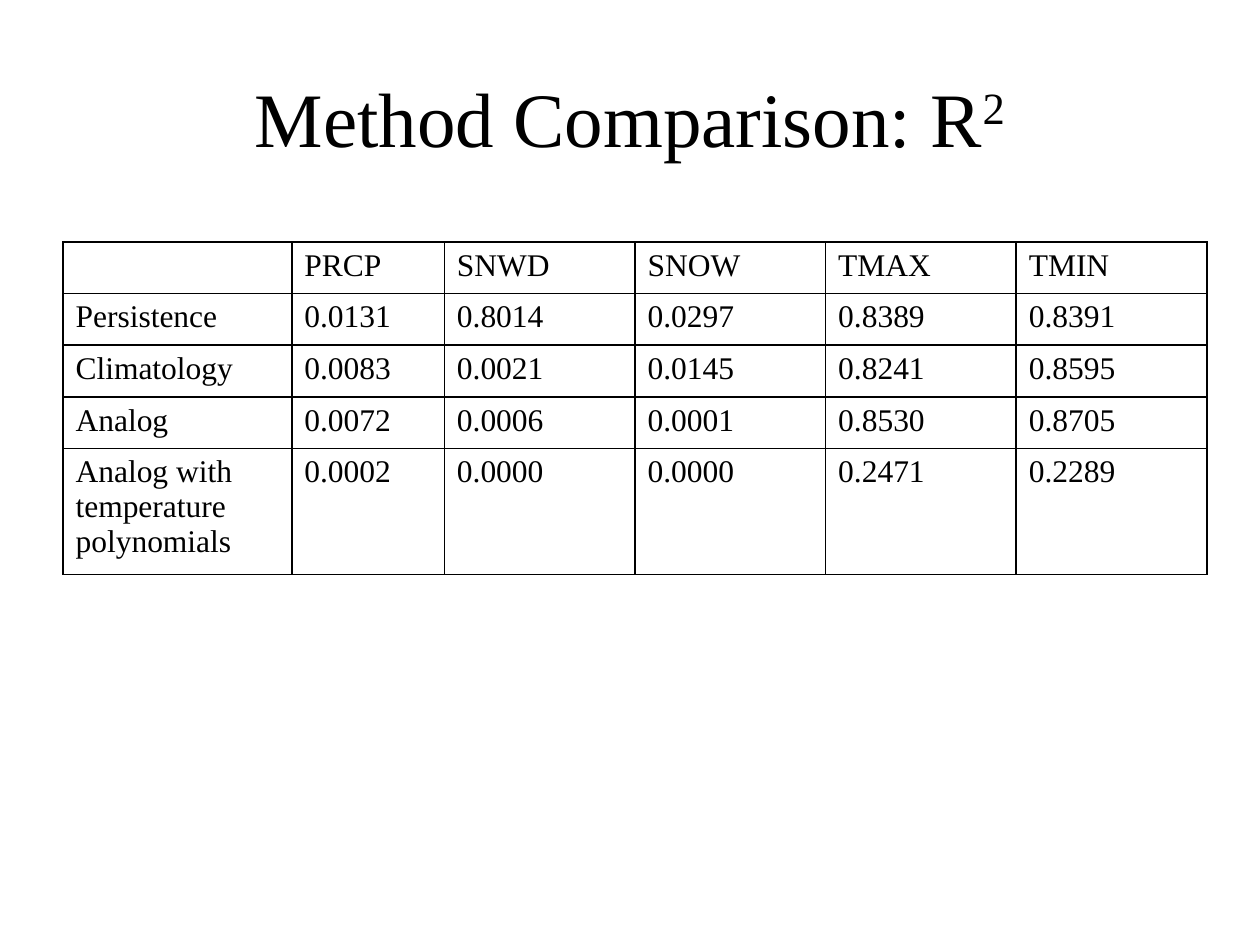
import pptx
import pptx.dml.color
import pptx.enum.text
import pptx.oxml.ns
import pptx.util
from lxml import etree

COLORS = {"ink": "000000", "paper": "FFFFFF"}
FONT = "Times New Roman"
SLIDE_WIDTH = pptx.util.Inches(10)
SLIDE_HEIGHT = pptx.util.Inches(7.5)
TABLE_WIDTH = pptx.util.Inches(9.08)
COLUMN_SHARES = [6, 4, 5, 5, 5, 5]
ROW_HEIGHTS = [0.41] * 4 + [0.93]
SCORES = [
    ["", "PRCP", "SNWD", "SNOW", "TMAX", "TMIN"],
    ["Persistence", "0.0131", "0.8014", "0.0297", "0.8389", "0.8391"],
    ["Climatology", "0.0083", "0.0021", "0.0145", "0.8241", "0.8595"],
    ["Analog", "0.0072", "0.0006", "0.0001", "0.8530", "0.8705"],
    ["Analog with temperature polynomials",
     "0.0002", "0.0000", "0.0000", "0.2471", "0.2289"],
]


def rgb(name):
    return pptx.dml.color.RGBColor.from_string(COLORS[name])


def style_font(paragraph, size):
    paragraph.font.name = FONT
    paragraph.font.size = pptx.util.Pt(size)
    paragraph.font.color.rgb = rgb("ink")


def add_title(slide, text, exponent):
    title = slide.shapes.add_textbox(
        int(SLIDE_WIDTH * 0.05), int(SLIDE_HEIGHT * 0.04),
        int(SLIDE_WIDTH * 0.9), pptx.util.Inches(1.25))
    frame = title.text_frame
    frame.word_wrap = True
    frame.vertical_anchor = pptx.enum.text.MSO_ANCHOR.MIDDLE
    heading = frame.paragraphs[0]
    heading.alignment = pptx.enum.text.PP_ALIGN.CENTER
    heading.add_run().text = text
    superscript = heading.add_run()
    superscript.text = exponent
    superscript._r.get_or_add_rPr().set("baseline", "30000")
    style_font(heading, 44)


def add_borders(cell):
    qn = pptx.oxml.ns.qn
    properties = cell._tc.get_or_add_tcPr()
    for side in ("lnL", "lnR", "lnT", "lnB"):
        line = etree.SubElement(properties, qn(f"a:{side}"), w=str(pptx.util.Pt(1)))
        fill = etree.SubElement(line, qn("a:solidFill"))
        etree.SubElement(fill, qn("a:srgbClr"), val=COLORS["ink"])


def fill_cell(cell, text):
    cell.text = text
    style_font(cell.text_frame.paragraphs[0], 18)
    add_borders(cell)
    cell.fill.background()


def add_score_table(slide):
    heights = [pptx.util.Inches(height) for height in ROW_HEIGHTS]
    scores = slide.shapes.add_table(
        len(SCORES), len(COLUMN_SHARES),
        int(SLIDE_WIDTH * 0.05), pptx.util.Inches(1.92),
        TABLE_WIDTH, sum(heights)).table
    scores.first_row = False
    scores.horz_banding = False
    for column, share in zip(scores.columns, COLUMN_SHARES):
        column.width = TABLE_WIDTH * share // sum(COLUMN_SHARES)
    for row, height, values in zip(scores.rows, heights, SCORES):
        row.height = height
        for cell, value in zip(row.cells, values):
            fill_cell(cell, value)


def main():
    presentation = pptx.Presentation()
    presentation.slide_width = SLIDE_WIDTH
    presentation.slide_height = SLIDE_HEIGHT
    slide = presentation.slides.add_slide(presentation.slide_layouts[6])
    slide.background.fill.solid()
    slide.background.fill.fore_color.rgb = rgb("paper")
    add_title(slide, "Method Comparison: R", "2")
    add_score_table(slide)
    presentation.save("out.pptx")


if __name__ == "__main__":
    main()
